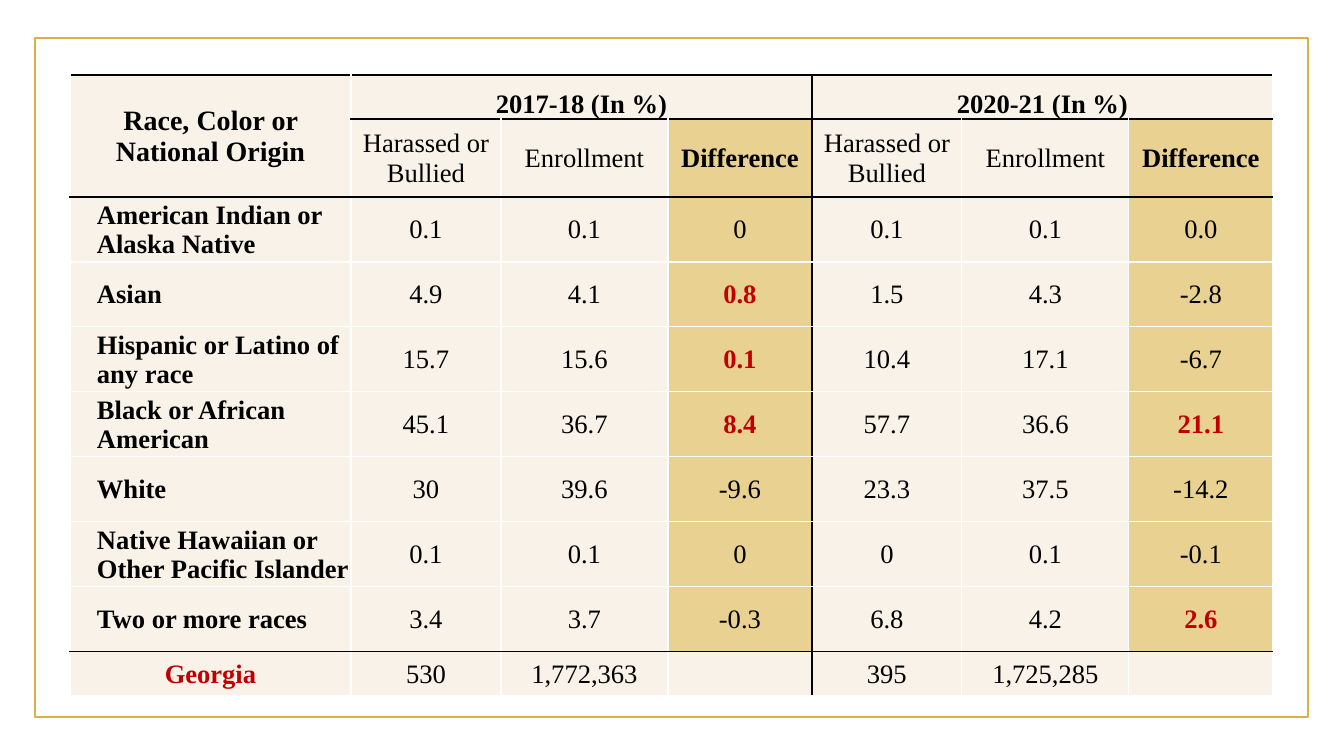
from lxml.etree import SubElement
from pptx import Presentation
from pptx.dml.color import RGBColor
from pptx.enum.shapes import MSO_SHAPE
from pptx.enum.text import MSO_ANCHOR, PP_ALIGN
from pptx.oxml.ns import qn
from pptx.util import Pt

SCALE = 914400 / 100.8
CREAM, GOLD, RED, BLACK, WHITE = "F8F2E9", "E8D191", "C00000", "000000", "FFFFFF"
COLS = [281] + [150, 167, 144] * 2
ROWS = [44, 78] + [65] * 7 + [44]
LAST = len(ROWS) - 1
DIFFS = (3, 6)
DARK_ROWS = (0, 1, 2, LAST)
DARK_COLS = (4,)
HEADS = ["Harassed or Bullied", "Enrollment", "Difference"]
DATA = [
    ["Race, Color or National Origin", "2017-18 (In %)", "", "", "2020-21 (In %)", "", ""],
    [""] + HEADS * 2,
    ["American Indian or Alaska Native", "0.1", "0.1", "0", "0.1", "0.1", "0.0"],
    ["Asian", "4.9", "4.1", "0.8", "1.5", "4.3", "-2.8"],
    ["Hispanic or Latino of any race", "15.7", "15.6", "0.1", "10.4", "17.1", "-6.7"],
    ["Black or African American", "45.1", "36.7", "8.4", "57.7", "36.6", "21.1"],
    ["White", "30", "39.6", "-9.6", "23.3", "37.5", "-14.2"],
    ["Native Hawaiian or Other Pacific Islander", "0.1", "0.1", "0", "0", "0.1", "-0.1"],
    ["Two or more races", "3.4", "3.7", "-0.3", "6.8", "4.2", "2.6"],
    ["Georgia", "530", "1,772,363", "", "395", "1,725,285", ""],
]


def px(num):
    return round(num * SCALE)


def rgb(code):
    return RGBColor.from_string(code)


def assign(item, **form):
    """Set each named attribute of item."""
    for name, value in form.items():
        setattr(item, name, value)


def add_frame(slide):
    frame = slide.shapes.add_shape(MSO_SHAPE.RECTANGLE, px(35), px(38), px(1273), px(679))
    frame.shadow.inherit = False
    frame.fill.background()
    frame.line.color.rgb = rgb("D9B247")
    frame.line.width = Pt(2)


def rule_cell(cell, row, col):
    """Draw the four borders, dark on the main lines of the grid."""
    sides = {
        "L": col in DARK_COLS,
        "R": col + cell.span_width in DARK_COLS,
        "T": row in DARK_ROWS,
        "B": row + cell.span_height in DARK_ROWS,
    }
    props = cell._tc.get_or_add_tcPr()
    for side, dark in sides.items():
        line = SubElement(props, qn(f"a:ln{side}"), w=str(Pt(1)))
        fill = SubElement(line, qn("a:solidFill"))
        SubElement(fill, qn("a:srgbClr"), val=BLACK if dark else WHITE)


def write_cell(cell, row, col, text):
    para = cell.text_frame.paragraphs[0]
    if col == 0 and 2 <= row < LAST:
        para._p.get_or_add_pPr().set("marL", str(px(26)))
    else:
        para.alignment = PP_ALIGN.CENTER
    rise = col in DIFFS and 2 <= row < LAST and float(text) > 0
    total = col == 0 and row == LAST
    bold = col == 0 or row == 0 or rise or text == "Difference"
    run = para.add_run()
    run.text = text
    assign(run.font, name="Times New Roman", bold=bold,
           size=Pt(20 if row == col == 0 else 19))
    run.font.color.rgb = rgb(RED if rise or total else BLACK)


def style_cell(cell, row, col):
    assign(cell, margin_left=px(1), margin_right=px(1), margin_top=px(1), margin_bottom=0,
           vertical_anchor=MSO_ANCHOR.BOTTOM if row == 0 and col else MSO_ANCHOR.MIDDLE)
    rule_cell(cell, row, col)
    cell.fill.solid()
    gold = col in DIFFS and 1 <= row < LAST
    cell.fill.fore_color.rgb = rgb(GOLD if gold else CREAM)


def add_grid(slide):
    grid = slide.shapes.add_table(len(ROWS), len(COLS), px(70), px(75),
                                  px(sum(COLS)), px(sum(ROWS))).table
    assign(grid, first_row=False, horz_banding=False)
    for col, width in zip(grid.columns, COLS):
        col.width = px(width)
    for row, height in zip(grid.rows, ROWS):
        row.height = px(height)
    for start, end in (((0, 0), (1, 0)), ((0, 1), (0, 3)), ((0, 4), (0, 6))):
        grid.cell(*start).merge(grid.cell(*end))
    for row, texts in enumerate(DATA):
        for col, text in enumerate(texts):
            cell = grid.cell(row, col)
            if cell.is_spanned:
                continue
            style_cell(cell, row, col)
            if text:
                write_cell(cell, row, col, text)


def main():
    deck = Presentation()
    assign(deck, slide_width=px(1344), slide_height=px(756))
    slide = deck.slides.add_slide(deck.slide_layouts[6])
    add_frame(slide)
    add_grid(slide)
    deck.save("out.pptx")


if __name__ == "__main__":
    main()
